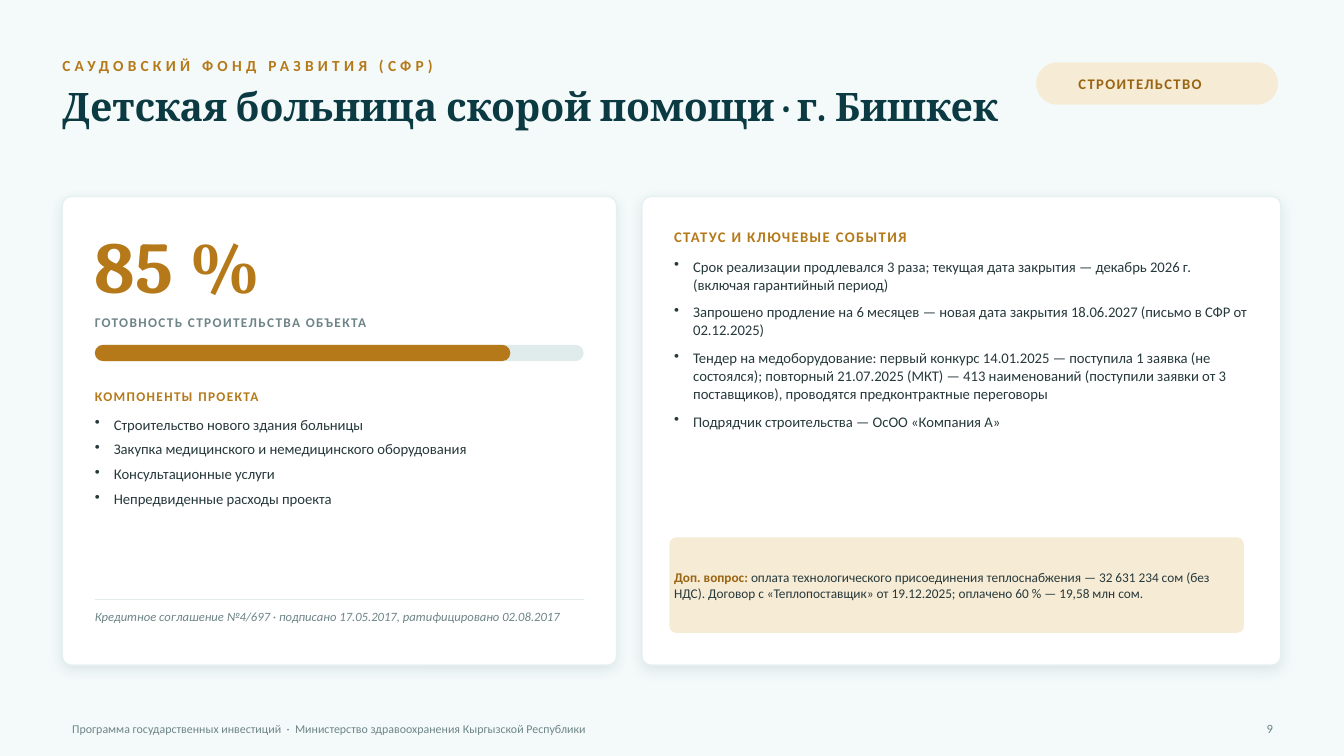
from lxml import etree
from pptx import Presentation
from pptx.dml.color import RGBColor
from pptx.enum.shapes import MSO_CONNECTOR, MSO_SHAPE
from pptx.enum.text import MSO_ANCHOR, MSO_AUTO_SIZE, PP_ALIGN
from pptx.oxml.ns import qn
from pptx.util import Cm, Pt

ROUNDED = MSO_SHAPE.ROUNDED_RECTANGLE
STRAIGHT = MSO_CONNECTOR.STRAIGHT
TOP, MIDDLE = MSO_ANCHOR.TOP, MSO_ANCHOR.MIDDLE
LEFT, RIGHT = PP_ALIGN.LEFT, PP_ALIGN.RIGHT
NO_AUTOFIT = MSO_AUTO_SIZE.NONE
TITLE_ONLY = 5

SANS, SERIF = "Calibri", "Cambria"
TEAL, GOLD, BROWN, SAND = "0B3A42", "B57919", "9A6512", "F6EBD5"
INK, GREY, TRACK, EDGE = "27393B", "6E8487", "E0EBEB", "E6F0F0"
WHITE, PAGE = "FFFFFF", "F4FAFA"

MARGIN = 1.57
CARD_TOP, CARD_HEIGHT = 4.95, 11.81
PROGRESS_LEFT, PROGRESS_WIDTH = 2.39, 12.32
STATUS_LEFT = 16.99
READINESS = 85

COMPONENTS = [
    "Строительство нового здания больницы",
    "Закупка медицинского и немедицинского оборудования",
    "Консультационные услуги",
    "Непредвиденные расходы проекта",
]
EVENTS = [
    "Срок реализации продлевался 3 раза; текущая дата закрытия — декабрь 2026 г. "
    "(включая гарантийный период)",
    "Запрошено продление на 6 месяцев — новая дата закрытия 18.06.2027 "
    "(письмо в СФР от 02.12.2025)",
    "Тендер на медоборудование: первый конкурс 14.01.2025 — поступила 1 заявка "
    "(не состоялся); повторный 21.07.2025 (МКТ) — 413 наименований (поступили "
    "заявки от 3 поставщиков), проводятся предконтрактные переговоры",
    "Подрядчик строительства — ОсОО «Компания А»",
]


def color(hex_value):
    return RGBColor.from_string(hex_value)


def style_run(run, size, hex_value, font=SANS, bold=False, italic=False, spacing=0):
    run.font.size = Pt(size)
    run.font.name = font
    run.font.bold = bold
    run.font.italic = italic
    run.font.color.rgb = color(hex_value)
    if spacing:
        run.font._element.set("spc", str(spacing * 100))


def prepare_frame(frame, anchor, inset_x=0, inset_y=0):
    frame.word_wrap = True
    frame.auto_size = NO_AUTOFIT
    frame.vertical_anchor = anchor
    frame.margin_left = frame.margin_right = Cm(inset_x)
    frame.margin_top = frame.margin_bottom = Cm(inset_y)


def add_text(slide, area, text, size, hex_value, anchor=MIDDLE, align=LEFT,
             inset=(0, 0), **look):
    frame = slide.shapes.add_textbox(*map(Cm, area)).text_frame
    prepare_frame(frame, anchor, *inset)
    frame.text = text
    paragraph = frame.paragraphs[0]
    paragraph.alignment = align
    style_run(paragraph.runs[0], size, hex_value, **look)
    return paragraph


def add_title(slide, area, text):
    title = slide.shapes.title
    title.left, title.top, title.width, title.height = map(Cm, area)
    prepare_frame(title.text_frame, TOP)
    title.text_frame.text = text
    paragraph = title.text_frame.paragraphs[0]
    paragraph.alignment = LEFT
    style_run(paragraph.runs[0], 28, TEAL, SERIF, bold=True)


def add_bullets(slide, area, items, gap):
    frame = slide.shapes.add_textbox(*map(Cm, area)).text_frame
    prepare_frame(frame, TOP)
    frame.text = "\n".join(items)
    for paragraph in frame.paragraphs:
        paragraph.line_spacing = 1.02
        paragraph.space_after = Pt(gap)
        properties = paragraph._p.get_or_add_pPr()
        properties.set("marL", str(Cm(0.48)))
        properties.set("indent", str(-Cm(0.48)))
        etree.SubElement(properties, qn("a:buChar"), char="•")
        style_run(paragraph.runs[0], 10.5, INK)


def add_panel(slide, area, fill, rounding=0.5):
    panel = slide.shapes.add_shape(ROUNDED, *map(Cm, area))
    panel.adjustments[0] = rounding
    panel.shadow.inherit = False
    panel.fill.solid()
    panel.fill.fore_color.rgb = color(fill)
    panel.line.fill.background()
    return panel


def add_card(slide, left, width):
    card = add_panel(slide, (left, CARD_TOP, width, CARD_HEIGHT), WHITE, 0.019)
    card.line.color.rgb = color(EDGE)
    card.line.width = Pt(1)
    # Soft shadow below the card
    effects = card._element.spPr.find(qn("a:effectLst"))
    shadow = etree.SubElement(effects, qn("a:outerShdw"), blurRad=str(Pt(9)),
                              dist=str(Pt(3)), dir="5400000", rotWithShape="0")
    tint = etree.SubElement(shadow, qn("a:srgbClr"), val=TEAL)
    etree.SubElement(tint, qn("a:alpha"), val="10000")


def add_divider(slide, left, top, width):
    divider = slide.shapes.add_connector(
        STRAIGHT, Cm(left), Cm(top), Cm(left + width), Cm(top))
    divider.line.color.rgb = color(TRACK)
    divider.line.width = Pt(1)
    etree.SubElement(divider._element.spPr, qn("a:effectLst"))


def add_header(slide):
    add_text(slide, (MARGIN, 1.27, 29.21, 0.76), "САУДОВСКИЙ ФОНД РАЗВИТИЯ (СФР)",
             11, GOLD, bold=True, spacing=3)
    add_title(slide, (MARGIN, 2.08, 23.7, 2.16),
              "Детская больница скорой помощи · г. Бишкек")
    add_panel(slide, (26.11, 1.57, 6.1, 1.07), SAND)
    add_text(slide, (27.18, 1.57, 4.83, 1.07), "СТРОИТЕЛЬСТВО",
             10.5, BROWN, bold=True, spacing=1)


def add_readiness(slide):
    left, width = PROGRESS_LEFT, PROGRESS_WIDTH
    add_card(slide, MARGIN, 13.97)
    add_text(slide, (left, 5.59, width, 2.16), f"{READINESS} %", 52, GOLD,
             font=SERIF, bold=True)
    add_text(slide, (left, 7.75, width, 0.76), "ГОТОВНОСТЬ СТРОИТЕЛЬСТВА ОБЪЕКТА",
             9.5, GREY, bold=True, spacing=1)
    # Progress bar
    for share, fill in ((100, TRACK), (READINESS, GOLD)):
        add_panel(slide, (left, 8.69, width * share / 100, 0.41), fill)
    add_text(slide, (left, 9.6, width, 0.76), "КОМПОНЕНТЫ ПРОЕКТА",
             9.5, GOLD, bold=True, spacing=1)
    add_bullets(slide, (left, 10.46, width, 8.89), COMPONENTS, 5)
    # Loan agreement
    add_divider(slide, left, 15.11, width)
    agreement = add_text(
        slide, (left, 15.37, width, 1.14),
        "Кредитное соглашение №4/697 · подписано 17.05.2017, ратифицировано 02.08.2017",
        9, GREY, anchor=TOP, italic=True)
    agreement.line_spacing = 0.98


def add_status(slide):
    add_card(slide, 16.18, 16.1)
    add_text(slide, (STATUS_LEFT, 5.59, 14.58, 0.76), "СТАТУС И КЛЮЧЕВЫЕ СОБЫТИЯ",
             10.5, GOLD, bold=True, spacing=1)
    add_bullets(slide, (STATUS_LEFT, 6.48, 14.53, 8.89), EVENTS, 7)
    # Additional question
    add_panel(slide, (16.87, 13.54, 14.48, 2.41), SAND, 0.074)
    question = add_text(slide, (STATUS_LEFT, 13.54, 14.07, 2.41), "Доп. вопрос: ",
                        9.5, BROWN, bold=True)
    details = question.add_run()
    details.text = ("оплата технологического присоединения теплоснабжения — "
                    "32 631 234 сом (без НДС). Договор с «Теплопоставщик» "
                    "от 19.12.2025; оплачено 60 % — 19,58 млн сом.")
    style_run(details, 9.5, INK)


def add_footer(slide):
    inset = (0.25, 0.13)
    add_text(slide, (MARGIN, 17.98, 26.67, 0.76),
             "Программа государственных инвестиций  ·  "
             "Министерство здравоохранения Кыргызской Республики",
             8.5, GREY, inset=inset)
    add_text(slide, (31.06, 17.98, 1.27, 0.76), "9", 9, GREY, align=RIGHT, inset=inset)


def main():
    deck = Presentation()
    deck.slide_width, deck.slide_height = Cm(33.87), Cm(19.05)
    slide = deck.slides.add_slide(deck.slide_layouts[TITLE_ONLY])
    slide.background.fill.solid()
    slide.background.fill.fore_color.rgb = color(PAGE)
    add_header(slide)
    add_readiness(slide)
    add_status(slide)
    add_footer(slide)
    deck.save("out.pptx")


if __name__ == "__main__":
    main()
